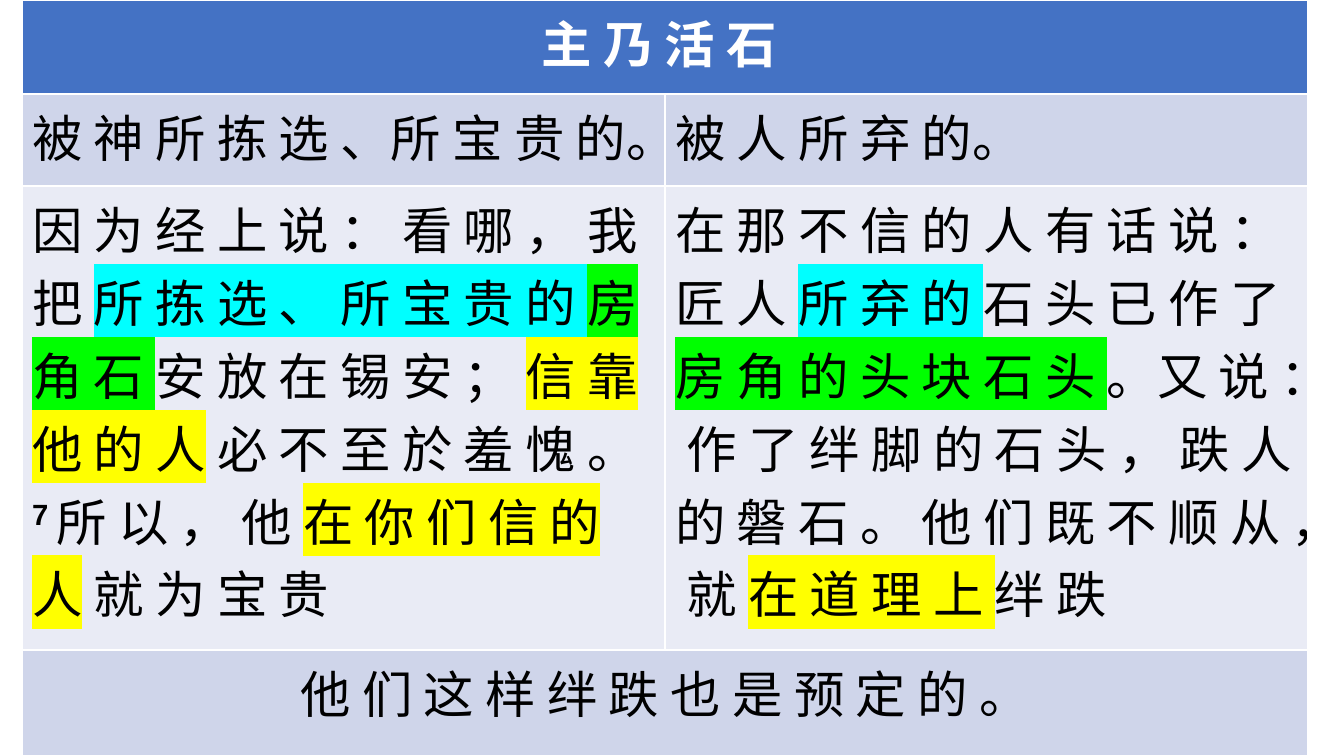
"""Build a slide with a two-column table of scripture on the living stone."""
from lxml import etree
from pptx import Presentation
from pptx import util as u
from pptx.dml import color
from pptx.enum import text
from pptx.oxml import ns

PX = 12192000 / 1344
CYAN, GREEN, YELLOW = "00FFFF", "00FF00", "FFFF00"
BAND, LIGHT = "CFD5EA", "E9EBF5"


def rgb(value):
    return color.RGBColor.from_string(value)


def add_text(para, words, font="Calibri", ink="000000", bold=False, mark=None, raised=False):
    span = para.add_run()
    span.text = words
    span.font.size = u.Pt(36)
    span.font.bold = bold
    span.font.color.rgb = rgb(ink)
    props = span.font._element
    if mark:
        highlight = etree.SubElement(props, ns.qn("a:highlight"))
        etree.SubElement(highlight, ns.qn("a:srgbClr")).set("val", mark)
    if raised:
        props.set("baseline", "30000")
    span.font.name = font


deck = Presentation()
deck.slide_width, deck.slide_height = round(1344 * PX), round(756 * PX)
page = deck.slides.add_slide(deck.slide_layouts[6])

row_heights = [94, 92, 464, 106]
column_width = 643
frame = page.shapes.add_table(
    len(row_heights), 2, round(22 * PX), 0,
    round(2 * column_width * PX), round(sum(row_heights) * PX))
table = frame.table
for column in table.columns:
    column.width = round(column_width * PX)
for row, height in zip(table.rows, row_heights):
    row.height = round(height * PX)
for index in (0, 3):
    table.cell(index, 0).merge(table.cell(index, 1))

roboto = {"font": "Roboto"}
verse_chosen = [
    [("因 为 经 上 说 ： 看 哪 ， 我 把 ", {}),
     ("所 拣 选 、 所 宝 贵 的 ", {"mark": CYAN}),
     ("房 角 石 ", {"mark": GREEN}),
     ("安 放 在 锡 安 ； ", {}),
     ("信 靠 他 的 人", {"mark": YELLOW}),
     (" 必 不 至 於 羞 愧 。", {})],
    [("7 ", {"font": "Arial", "bold": True, "raised": True}),
     ("所 以 ， 他 ", roboto),
     ("在 你 们 信 的 人", {**roboto, "mark": YELLOW}),
     (" 就 为 宝 贵", roboto)],
]
verse_rejected = [
    [("在 那 不 信 的 人 有 话 说 ： 匠 人 ", roboto),
     ("所 弃 的 ", {**roboto, "mark": CYAN}),
     ("石 头 已 作 了 ", roboto),
     ("房 角 的 头 块 石 头 ", {**roboto, "mark": GREEN}),
     ("。又 说 ： 作 了 绊 脚 的 石 头 ， 跌 人 的 磐 石 。 他 们 既 不 顺 从 ， 就 ", roboto),
     ("在 道 理 上 ", {**roboto, "mark": YELLOW}),
     ("绊 跌", roboto)],
]
left, center = text.PP_ALIGN.LEFT, text.PP_ALIGN.CENTER
contents = [
    (0, 0, "4472C4", center, [[("主 乃 活 石 ", {"ink": "FFFFFF", "bold": True})]]),
    (1, 0, BAND, left, [[("被 神 所 拣 选 、所 宝 贵 的。", {})]]),
    (1, 1, BAND, left, [[("被 人 所 弃 的。", {})]]),
    (2, 0, LIGHT, left, verse_chosen),
    (2, 1, LIGHT, left, verse_rejected),
    (3, 0, BAND, center, [[("他 们 这 样 绊 跌 也 是 预 定 的 。", roboto)]]),
]
for row, column, fill, alignment, paragraphs in contents:
    cell = table.cell(row, column)
    cell.fill.solid()
    cell.fill.fore_color.rgb = rgb(fill)
    for number, spans in enumerate(paragraphs):
        para = cell.text_frame.add_paragraph() if number else cell.text_frame.paragraphs[0]
        para.alignment = alignment
        for words, style in spans:
            add_text(para, words, **style)

deck.save("out.pptx")
